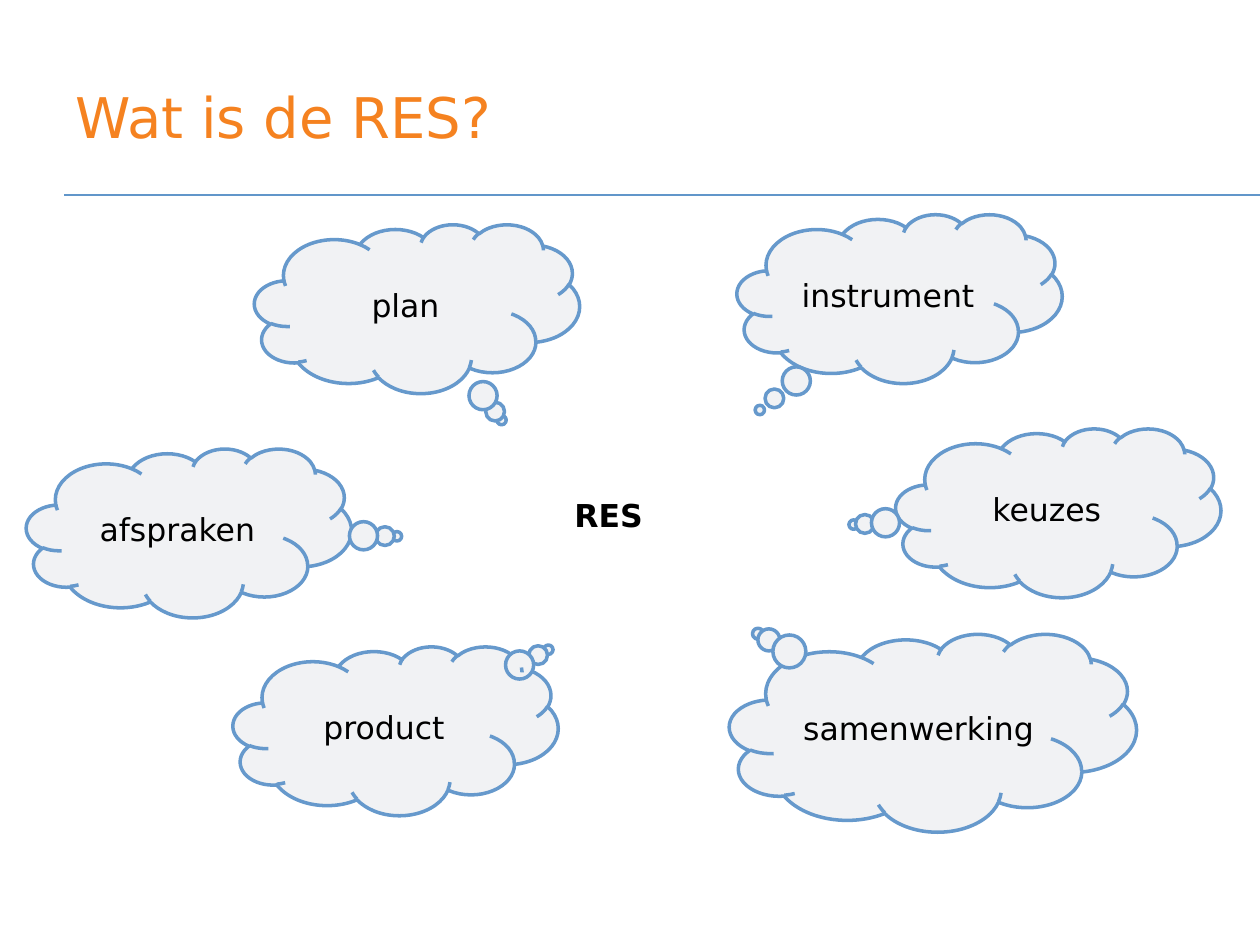
from pptx import Presentation
from pptx.dml.color import RGBColor
from pptx.enum.shapes import MSO_CONNECTOR, MSO_SHAPE
from pptx.enum.text import MSO_ANCHOR, PP_ALIGN
from pptx.oxml.ns import qn
from pptx.util import Inches, Pt
from lxml.etree import SubElement

FONT = "DejaVu Sans"
COLORS = {"title": "F58220", "text": "000000", "rule": "6196CA",
          "cloud": "F1F2F4", "edge": "6699CC"}
SMALL = (2.58, 1.34)
LARGE = (3.23, 1.57)

# word, left, top, size, tail offset from the centre as a share of the size
CLOUDS = [
    ("instrument", 5.85, 1.7, SMALL, (-0.43, 0.66)),
    ("samenwerking", 5.79, 5.03, LARGE, (-0.43, -0.5)),
    ("plan", 2.02, 1.78, SMALL, (0.26, 0.66)),
    ("product", 1.85, 5.13, SMALL, (0.47, -0.48)),
    ("afspraken", 0.21, 3.56, SMALL, (0.64, 0.02)),
    ("keuzes", 7.11, 3.4, SMALL, (-0.63, 0.07)),
]


def color(name):
    return RGBColor.from_string(COLORS[name])


def write(shape, text, size, tint="text", align=PP_ALIGN.CENTER, bold=False):
    frame = shape.text_frame
    frame.word_wrap = True
    frame.vertical_anchor = MSO_ANCHOR.MIDDLE
    para = frame.paragraphs[0]
    para.text = text
    para.alignment = align
    font = para.font
    font.name, font.size, font.bold = FONT, Pt(size), bold
    font.color.rgb = color(tint)


def add_text(slide, box, *args, **style):
    write(slide.shapes.add_textbox(*map(Inches, box)), *args, **style)


def add_rule(slide, left, right, top):
    rule = slide.shapes.add_connector(
        MSO_CONNECTOR.STRAIGHT, Inches(left), Inches(top), Inches(right), Inches(top))
    rule.line.color.rgb = color("rule")
    rule.line.width = Pt(1)
    SubElement(rule._element.spPr, qn("a:effectLst"))


def add_cloud(slide, word, left, top, size, tail):
    cloud = slide.shapes.add_shape(
        MSO_SHAPE.CLOUD_CALLOUT, *map(Inches, (left, top, *size)))
    cloud.adjustments[0], cloud.adjustments[1] = tail
    cloud.shadow.inherit = False
    cloud.fill.solid()
    cloud.fill.fore_color.rgb = color("cloud")
    cloud.line.color.rgb = color("edge")
    cloud.line.width = Pt(2)
    write(cloud, word, 18)


def main():
    deck = Presentation()
    deck.slide_width, deck.slide_height = Inches(10), Inches(7.5)
    slide = deck.slides.add_slide(deck.slide_layouts[6])
    add_rule(slide, 0.51, 10, 1.55)
    add_text(slide, (0.5, 0.3, 9, 1.25), "Wat is de RES?", 32, "title", PP_ALIGN.LEFT)
    add_text(slide, (4.33, 3.89, 1, 0.4), "RES", 18, bold=True)
    for cloud in CLOUDS:
        add_cloud(slide, *cloud)
    deck.save("out.pptx")


if __name__ == "__main__":
    main()
